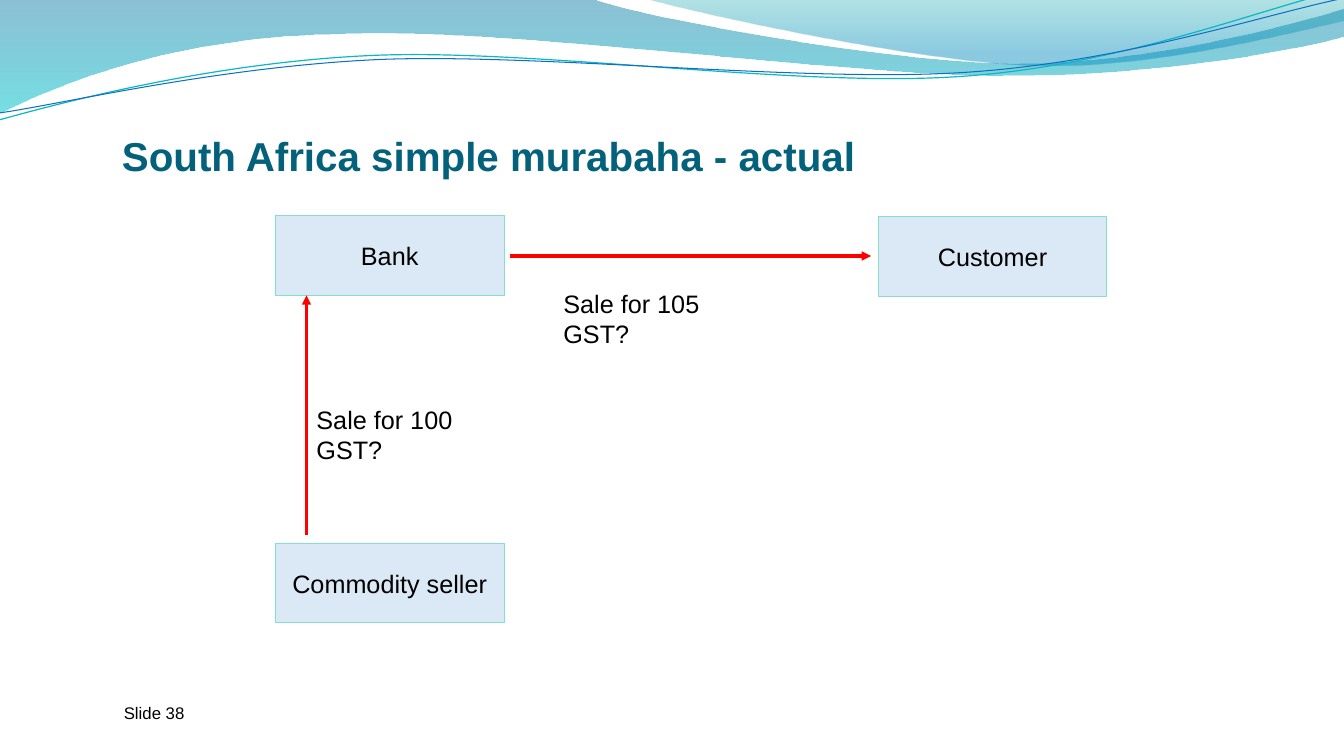
from lxml.etree import SubElement
from pptx import Presentation
from pptx.dml.color import RGBColor
from pptx.enum.shapes import MSO_CONNECTOR, MSO_SHAPE
from pptx.enum.text import MSO_ANCHOR as Anchor, PP_ALIGN as Align
from pptx.oxml.ns import qn
from pptx.util import Inches, Pt

presentation = Presentation()
presentation.slide_width, presentation.slide_height = Inches(13.33), Inches(7.5)
slide = presentation.slides.add_slide(presentation.slide_layouts[6])
hex_color = RGBColor.from_string


def write_lines(shape, lines, size=18, color="000000", bold=False, align=Align.LEFT):
    frame = shape.text_frame
    for index, line in enumerate(lines):
        paragraph = frame.paragraphs[0] if index == 0 else frame.add_paragraph()
        paragraph.alignment = align
        run = paragraph.add_run()
        run.text = line
        run.font.name, run.font.size, run.font.bold = "Arial", Pt(size), bold
        run.font.color.rgb = hex_color(color)
    return frame


def set_alphas(shape, *percents):
    colors = shape.fill._xPr.iter(qn("a:srgbClr"))
    for color, percent in zip(colors, percents):
        SubElement(color, qn("a:alpha")).set("val", str(percent * 1000))


# Waves: a pair is a straight step, six numbers are a Bézier curve
waves = [
    ([(0, 0), (5.87, -0.01), (6.34, 0.17, 8.85, 0.63, 10.11, 0.63),
      (11.38, 0.63, 12.78, 0.26, 13.33, 0.09), (13.35, 0.36),
      (13.11, 0.44, 11.6, 0.76, 9.94, 0.75), (8.29, 0.75, 5.09, 0.28, 3.43, 0.34),
      (1.72, 0.36, 0.61, 0.83, -0.01, 1.13)],
     [(0, "0074A1", 45), (1, "00C6CF", 55)], None),
    ([(6.39, -0.01), (6.79, 0.11, 9.09, 0.62, 10.25, 0.65),
      (11.41, 0.69, 12.82, 0.32, 13.33, 0.21), (13.33, 0)],
     [(0, "00A1A9", 30), (0.8, "008BBF", 45)], None),
    ([(-0.01, 1.19), (0.64, 1.01, 2.11, 0.62, 3.69, 0.55),
      (5.27, 0.48, 7.9, 0.87, 9.5, 0.76), (11.1, 0.66, 12.52, 0.08, 13.31, -0.1)],
     None, ("0AB8BF", 0.85)),
    ([(0, 1.12), (0.63, 1.03, 2.18, 0.66, 3.78, 0.59),
      (5.37, 0.53, 7.96, 0.82, 9.55, 0.72), (11.15, 0.62, 12.55, 0.14, 13.34, -0.02)],
     None, ("0F6FC6", 0.75)),
]
for segments, gradient, outline in waves:
    corners = [tuple(map(Inches, segment[-2:])) for segment in segments]
    builder = slide.shapes.build_freeform(*corners[0])
    builder.add_line_segments(corners[1:], close=gradient is not None)
    wave = builder.convert_to_shape()
    wave.shadow.inherit = False

    # Bend the straight steps into curves
    steps = list(wave._element.iter(qn("a:lnTo")))
    for step, segment in zip(steps, segments[1:]):
        if len(segment) == 6:
            step.tag = qn("a:cubicBezTo")
            step.remove(step[0])
            for x, y in zip(segment[::2], segment[1::2]):
                point = SubElement(step, qn("a:pt"))
                point.set("x", str(Inches(x) - wave.left))
                point.set("y", str(Inches(y) - wave.top))

    if gradient:
        wave.fill.gradient()
        wave.fill.gradient_angle = 270
        for stop, (position, color, _) in zip(wave.fill.gradient_stops, gradient):
            stop.position = position
            stop.color.rgb = hex_color(color)
        set_alphas(wave, *[alpha for _, _, alpha in gradient])
        wave.line.fill.background()
    else:
        wave.fill.background()
        wave.line.color.rgb, wave.line.width = hex_color(outline[0]), Pt(outline[1])

# Title
title = slide.shapes.add_textbox(Inches(1.21), Inches(0.95), Inches(7.43), Inches(0.83))
frame = write_lines(title, ["South Africa simple murabaha - actual"], 28.8, "04617B", True)
frame.word_wrap, frame.vertical_anchor = True, Anchor.BOTTOM
frame.margin_left = frame.margin_right = frame.margin_bottom = 0

# Parties
for name, left, top in [("Bank", 2.73, 2.14), ("Commodity seller", 2.73, 5.39),
                        ("Customer", 8.71, 2.15)]:
    party = slide.shapes.add_shape(MSO_SHAPE.RECTANGLE, Inches(left), Inches(top),
                                   Inches(2.27), Inches(0.79))
    party.shadow.inherit = False
    party.fill.solid()
    party.fill.fore_color.rgb = hex_color("0F6FC6")
    set_alphas(party, 15)
    party.line.color.rgb, party.line.width = hex_color("85DFD0"), Pt(0.75)
    frame = write_lines(party, [name], align=Align.CENTER)
    frame.word_wrap, frame.vertical_anchor = False, Anchor.MIDDLE
    frame.margin_left = frame.margin_right = Inches(0.07)
    frame.margin_top = frame.margin_bottom = 0

# Sale arrows
for ends in [(3.04, 5.31, 3.04, 2.93), (5.06, 2.54, 8.64, 2.54)]:
    arrow = slide.shapes.add_connector(MSO_CONNECTOR.STRAIGHT, *map(Inches, ends))
    arrow.line.color.rgb, arrow.line.width = hex_color("FF0000"), Pt(2.25)
    SubElement(arrow.line._get_or_add_ln(), qn("a:tailEnd")).set("type", "triangle")
    SubElement(arrow._element.spPr, qn("a:effectLst"))

# Sale labels and slide number
for lines, size, box in [(["Slide 38"], 12, (1.13, 6.92, 2.33, 0.4)),
                         (["Sale for 100", "GST?"], 18, (3.04, 3.96, 2.31, 0.71)),
                         (["Sale for 105", "GST?"], 18, (5.49, 2.81, 2.44, 0.71))]:
    label = slide.shapes.add_textbox(*map(Inches, box))
    write_lines(label, lines, size).word_wrap = True

presentation.save("out.pptx")
